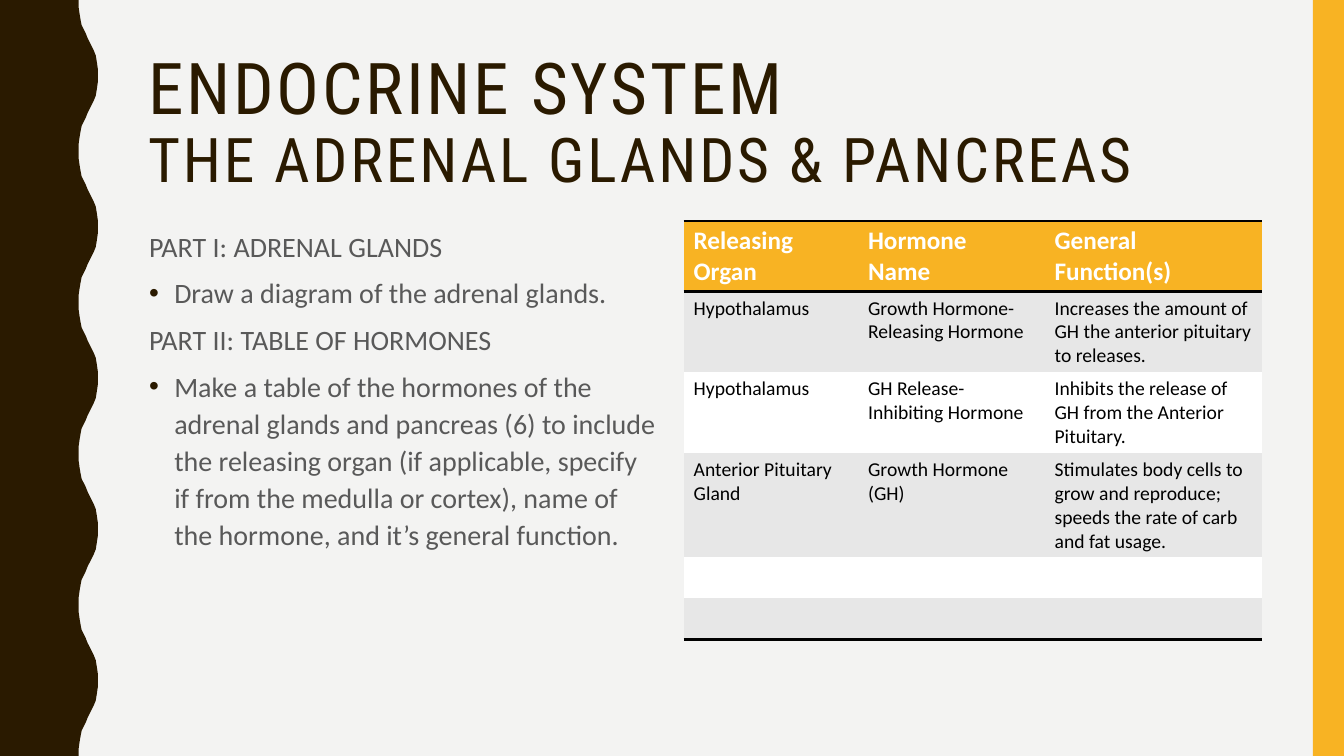
from lxml.etree import SubElement
from pptx import Presentation
from pptx.dml.color import RGBColor
from pptx.enum.shapes import MSO_SHAPE
from pptx.enum.text import MSO_ANCHOR
from pptx.oxml.ns import qn
from pptx.util import Inches, Pt

COLORS = {
    "background": "F3F3F2",
    "brown": "2A1A00",
    "gold": "F8B323",
    "body": "595959",
    "band": "E7E7E7",
    "white": "FFFFFF",
    "black": "000000",
}
TITLE_LINES = [("ENDOCRINE SYSTEM", 51), ("THE ADRENAL GLANDS & PANCREAS", 44)]
BODY = [
    ("PART I: ADRENAL GLANDS", False),
    ("Draw a diagram of the adrenal glands.", True),
    ("PART II: TABLE OF HORMONES", False),
    ("Make a table of the hormones of the adrenal glands and pancreas (6) to include "
     "the releasing organ (if applicable, specify if from the medulla or cortex), "
     "name of the hormone, and it’s general function.", True),
]
HORMONES = [
    ("Releasing Organ", "Hormone Name", "General Function(s)"),
    ("Hypothalamus", "Growth Hormone-Releasing Hormone",
     "Increases the amount of GH the anterior pituitary to releases."),
    ("Hypothalamus", "GH Release-Inhibiting Hormone",
     "Inhibits the release of GH from the Anterior Pituitary."),
    ("Anterior Pituitary Gland", "Growth Hormone (GH)",
     "Stimulates body cells to grow and reproduce; speeds the rate of carb and fat usage."),
    ("", "", ""),
    ("", "", ""),
]
COLUMN_WIDTHS = [1.73, 1.85, 2.16]
ROW_HEIGHT = 0.41
WAVE_PERIOD = 1.5
WAVE_COUNT = 5
HALF_WAVE = [
    (0.78, 0), (0.78, 0.07), (0.79, 0.14), (0.8, 0.2), (0.81, 0.25),
    (0.83, 0.29), (0.85, 0.33), (0.87, 0.38), (0.89, 0.42), (0.91, 0.46),
    (0.93, 0.5), (0.95, 0.55), (0.96, 0.61), (0.97, 0.68), (0.97, 0.75),
]
NO_STYLE = "{2D5ABB26-0587-4C30-8999-92F81FD0307C}"


def color(name):
    return RGBColor.from_string(COLORS[name])


def paint(shape, name):
    shape.shadow.inherit = False
    shape.fill.solid()
    shape.fill.fore_color.rgb = color(name)
    shape.line.fill.background()


def add_run(paragraph, text, size, font, name, bold=False):
    run = paragraph.add_run()
    run.text = text
    run.font.size = Pt(size)
    run.font.name = font
    run.font.bold = bold
    run.font.color.rgb = color(name)
    return run


def add_text_frame(slide, left, top, width, height, anchor):
    box = slide.shapes.add_textbox(Inches(left), Inches(top), Inches(width), Inches(height))
    box.text_frame.word_wrap = True
    box.text_frame.vertical_anchor = anchor
    return box.text_frame


def add_bullet(paragraph):
    properties = paragraph._p.get_or_add_pPr()
    properties.set("marL", str(Inches(0.25)))
    properties.set("indent", str(-Inches(0.25)))
    bullet_color = SubElement(properties, qn("a:buClr"))
    SubElement(bullet_color, qn("a:srgbClr"), val=COLORS["brown"])
    SubElement(properties, qn("a:buFont"), typeface="Arial")
    SubElement(properties, qn("a:buChar"), char="•")


def add_border(cell, side):
    line = SubElement(cell._tc.get_or_add_tcPr(), qn(side), w=str(Pt(2)))
    fill = SubElement(line, qn("a:solidFill"))
    SubElement(fill, qn("a:srgbClr"), val=COLORS["black"])


def add_wave(slide):
    mirrored = [(x, WAVE_PERIOD - y) for x, y in HALF_WAVE[-2::-1]]
    period = HALF_WAVE + mirrored
    edge = [(x, y + index * WAVE_PERIOD) for index in range(WAVE_COUNT) for x, y in period]
    points = [(Inches(x), Inches(y)) for x, y in edge + [(0, 7.5)]]
    builder = slide.shapes.build_freeform(0, 0)
    builder.add_line_segments(points, close=True)
    paint(builder.convert_to_shape(), "brown")


def add_title(slide):
    frame = add_text_frame(slide, 1.37, 0.42, 11.13, 1.63, MSO_ANCHOR.MIDDLE)
    paragraph = frame.paragraphs[0]
    paragraph.line_spacing = 0.9
    for index, (text, size) in enumerate(TITLE_LINES):
        if index:
            paragraph.add_line_break()
        run = add_run(paragraph, text, size, "Roboto Condensed", "brown")
        run.font._element.set("spc", "200")


def add_body(slide):
    frame = add_text_frame(slide, 1.38, 2.19, 5.25, 4.79, MSO_ANCHOR.TOP)
    for index, (text, bulleted) in enumerate(BODY):
        paragraph = frame.add_paragraph() if index else frame.paragraphs[0]
        paragraph.line_spacing = 1.1
        paragraph.space_before = Pt(7)
        if bulleted:
            add_bullet(paragraph)
        add_run(paragraph, text, 20, "Calibri", "body")


def add_hormone_table(slide):
    row_count = len(HORMONES)
    frame = slide.shapes.add_table(
        row_count, len(COLUMN_WIDTHS), Inches(6.78), Inches(2.19),
        Inches(sum(COLUMN_WIDTHS)), Inches(ROW_HEIGHT * row_count))
    table = frame.table
    table._tbl.tblPr.find(qn("a:tableStyleId")).text = NO_STYLE
    for column, width in zip(table.columns, COLUMN_WIDTHS):
        column.width = Inches(width)
    for row_index, texts in enumerate(HORMONES):
        table.rows[row_index].height = Inches(ROW_HEIGHT)
        header = row_index == 0
        fill_name = "gold" if header else ("band" if row_index % 2 else "white")
        for column_index, text in enumerate(texts):
            cell = table.cell(row_index, column_index)
            if header:
                add_border(cell, "a:lnT")
            if header or row_index == row_count - 1:
                add_border(cell, "a:lnB")
            cell.fill.solid()
            cell.fill.fore_color.rgb = color(fill_name)
            if text:
                add_run(cell.text_frame.paragraphs[0], text, 18 if header else 14,
                        "Calibri", "white" if header else "black", header)


def main():
    presentation = Presentation()
    presentation.slide_width = Inches(13.33)
    presentation.slide_height = Inches(7.5)
    slide = presentation.slides.add_slide(presentation.slide_layouts[6])
    slide.background.fill.solid()
    slide.background.fill.fore_color.rgb = color("background")
    add_wave(slide)
    stripe = slide.shapes.add_shape(
        MSO_SHAPE.RECTANGLE, Inches(13.02), 0, Inches(0.31), Inches(7.5))
    paint(stripe, "gold")
    add_title(slide)
    add_body(slide)
    add_hormone_table(slide)
    presentation.save("out.pptx")


if __name__ == "__main__":
    main()
